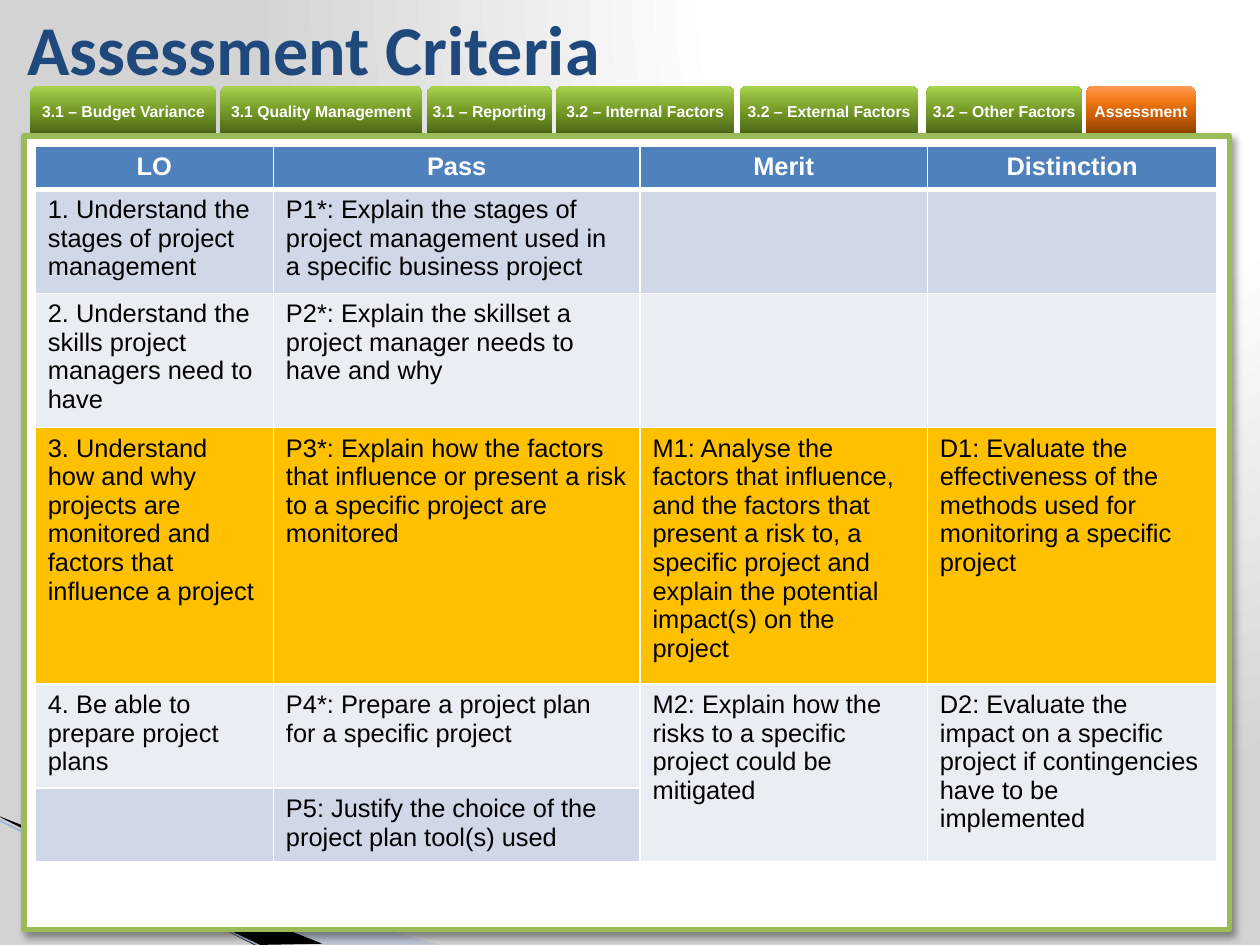
"""Builds the Assessment Criteria slide of a project management course."""
from dataclasses import dataclass

import pptx
import pptx.dml.color
import pptx.enum.shapes
import pptx.enum.text
import pptx.oxml
import pptx.oxml.ns
import pptx.util

ALIGN = pptx.enum.text.PP_ALIGN
SHAPE = pptx.enum.shapes.MSO_SHAPE


@dataclass(frozen=True)
class Theme:
    """Colours, fonts and type sizes of the deck."""
    heading_font: str = "Calibri"
    body_font: str = "Arial"
    title_size: float = 40
    table_size: float = 14.5
    tab_size: float = 9
    navy: str = "1F497D"
    white: str = "FFFFFF"
    black: str = "000000"
    header: str = "4F81BD"
    band_dark: str = "D0D8E8"
    band_light: str = "E9EDF4"
    highlight: str = "FFC000"
    frame: str = "9BBB59"
    ribbon: str = "A7B9DB"
    ribbon_line: str = "9EB3D6"
    backdrop: tuple = ((0, "FFFFFF"), (40, "FFFFFF"), (100, "D3D3D3"))
    green: tuple = ((0, "4A6316"), (50, "769C27"), (70, "89B137"), (100, "A9D651"))
    orange: tuple = ((0, "8B3F00"), (50, "DA6606"), (70, "F47917"), (100, "FF9C54"))


def rgb(value):
    """Turn a hex string into a colour."""
    return pptx.dml.color.RGBColor.from_string(value)


def drawing(markup):
    """Build one DrawingML element from its markup."""
    namespaces = pptx.oxml.ns.nsdecls("a", "p")
    name_end = min(markup.index(mark) for mark in " />" if mark in markup)
    return pptx.oxml.parse_xml(f"{markup[:name_end]} {namespaces}{markup[name_end:]}")


def gradient(stops, direction):
    """Return the markup of a gradient fill."""
    marks = "".join(f'<a:gs pos="{share * 1000}"><a:srgbClr val="{colour}"/></a:gs>'
                    for share, colour in stops)
    return f'<a:gradFill rotWithShape="1"><a:gsLst>{marks}</a:gsLst>{direction}</a:gradFill>'


class SlideBuilder:
    """Draws styled elements on a slide divided into 100 columns and 75 rows."""

    def __init__(self, presentation, theme):
        self.theme = theme
        self.column = presentation.slide_width / 100
        self.row = presentation.slide_height / 75
        self.slide = presentation.slides.add_slide(presentation.slide_layouts[6])
        self.shapes = self.slide.shapes

    def place(self, left, top, width, height):
        """Convert grid units to slide lengths."""
        return (round(left * self.column), round(top * self.row),
                round(width * self.column), round(height * self.row))

    def set_text(self, frame, text, size, colour, font=None, bold=False, align=ALIGN.LEFT):
        """Fill a text frame with one styled paragraph."""
        frame.word_wrap = True
        frame.text = text
        paragraph = frame.paragraphs[0]
        paragraph.alignment = align
        for run in paragraph.runs:
            run.font.name = font or self.theme.body_font
            run.font.size = pptx.util.Pt(size)
            run.font.bold = bold
            run.font.color.rgb = rgb(colour)

    def background(self):
        """Set the radial backdrop."""
        direction = '<a:path path="circle"><a:fillToRect l="65000" t="0" r="0" b="98000"/></a:path>'
        fill = gradient(self.theme.backdrop, direction)
        self.slide.element.cSld.insert(
            0, drawing(f"<p:bg><p:bgPr>{fill}<a:effectLst/></p:bgPr></p:bg>"))

    def ribbon(self, points, colour, opacity=100):
        """Draw a filled polygon."""
        corners = [self.place(x, y, 0, 0)[:2] for x, y in points]
        builder = self.shapes.build_freeform(*corners[0], scale=1.0)
        builder.add_line_segments(corners[1:], close=True)
        shape = builder.convert_to_shape()
        shape.shadow.inherit = False
        shape.line.fill.background()
        shape.fill.solid()
        shape.fill.fore_color.rgb = rgb(colour)
        colour_element = shape.element.spPr.find(".//" + pptx.oxml.ns.qn("a:srgbClr"))
        colour_element.append(drawing(f'<a:alpha val="{opacity * 1000}"/>'))

    def line(self, start, end, colour, width):
        """Draw a straight line."""
        connector = self.shapes.add_connector(
            pptx.enum.shapes.MSO_CONNECTOR.STRAIGHT, *self.place(*start, *end))
        connector.line.color.rgb = rgb(colour)
        connector.line.width = pptx.util.Pt(width)
        connector.element.spPr.append(drawing("<a:effectLst/>"))

    def tab(self, text, left, width, stops):
        """Draw a navigation tab."""
        shape = self.shapes.add_shape(SHAPE.ROUND_2_SAME_RECTANGLE,
                                      *self.place(left, 6.8, width, 3.9))
        shape.shadow.inherit = False
        shape.line.fill.background()
        shape.fill.background()
        properties = shape.element.spPr
        properties.replace(properties.find(pptx.oxml.ns.qn("a:noFill")),
                           drawing(gradient(stops, '<a:lin ang="16200000" scaled="0"/>')))
        frame = shape.text_frame
        frame.margin_left = frame.margin_right = frame.margin_top = frame.margin_bottom = 0
        frame.vertical_anchor = pptx.enum.text.MSO_ANCHOR.MIDDLE
        self.set_text(frame, text, self.theme.tab_size, self.theme.white, bold=True,
                      align=ALIGN.CENTER)

    def panel(self, *box):
        """Draw the framed content panel with its shadow."""
        shape = self.shapes.add_shape(SHAPE.RECTANGLE, *self.place(*box))
        shape.shadow.inherit = False
        shape.fill.solid()
        shape.fill.fore_color.rgb = rgb(self.theme.white)
        shape.line.color.rgb = rgb(self.theme.frame)
        shape.line.width = pptx.util.Pt(3)
        shape.element.spPr.find(pptx.oxml.ns.qn("a:effectLst")).append(drawing(
            '<a:outerShdw blurRad="50800" dist="38100" dir="2700000" algn="tl" rotWithShape="0">'
            f'<a:srgbClr val="{self.theme.black}"><a:alpha val="40000"/></a:srgbClr>'
            '</a:outerShdw>'))

    def title(self, text, *box):
        """Add the slide title."""
        frame = self.shapes.add_textbox(*self.place(*box)).text_frame
        frame.vertical_anchor = pptx.enum.text.MSO_ANCHOR.MIDDLE
        self.set_text(frame, text, self.theme.title_size, self.theme.navy,
                      self.theme.heading_font, bold=True)

    def cell(self, cell, text, fill, header):
        """Fill, border and label one table cell."""
        cell.fill.solid()
        cell.fill.fore_color.rgb = rgb(fill)
        properties = cell._tc.get_or_add_tcPr()
        for index, side in enumerate("LRTB"):
            width = pptx.util.Pt(3 if header and side == "B" else 1)
            properties.insert(index, drawing(
                f'<a:ln{side} w="{width}"><a:solidFill><a:srgbClr val="{self.theme.white}"/>'
                f'</a:solidFill></a:ln{side}>'))
        if text:
            self.set_text(cell.text_frame, text, self.theme.table_size,
                          self.theme.white if header else self.theme.black,
                          bold=header, align=ALIGN.CENTER if header else ALIGN.LEFT)

    def table(self, left, top, widths, heights, rows, fills, merges):
        """Draw the criteria table."""
        box = self.place(left, top, sum(widths), sum(heights))
        table = self.shapes.add_table(len(rows), len(widths), *box).table
        for column, width in zip(table.columns, widths):
            column.width = round(width * self.column)
        for row, height in zip(table.rows, heights):
            row.height = round(height * self.row)
        for row_index, (texts, fill) in enumerate(zip(rows, fills)):
            for column_index, text in enumerate(texts):
                self.cell(table.cell(row_index, column_index), text, fill, row_index == 0)
        for first, last in merges:
            table.cell(*first).merge(table.cell(*last))


TABS = [("3.1 – Budget Variance", 2.4, 14.8), ("3.1 Quality Management", 17.5, 16),
        ("3.1 – Reporting", 33.9, 9.9), ("3.2 – Internal Factors", 44.1, 14.2),
        ("3.2 – External Factors", 58.7, 14.2), ("3.2 – Other Factors", 73.5, 12.4),
        ("Assessment", 86.2, 8.7)]

CRITERIA = [
    ("LO", "Pass", "Merit", "Distinction"),
    ("1. Understand the stages of project management",
     "P1*: Explain the stages of project management used in a specific business project", "", ""),
    ("2. Understand the skills project managers need to have",
     "P2*: Explain the skillset a project manager needs to have and why", "", ""),
    ("3. Understand how and why projects are monitored and factors that influence a project",
     "P3*: Explain how the factors that influence or present a risk to a specific project are monitored",
     "M1: Analyse the factors that influence, and the factors that present a risk to, a specific "
     "project and explain the potential impact(s) on the project",
     "D1: Evaluate the effectiveness of the methods used for monitoring a specific project"),
    ("4. Be able to prepare project plans", "P4*: Prepare a project plan for a specific project",
     "M2: Explain how the risks to a specific project could be mitigated",
     "D2: Evaluate the impact on a specific project if contingencies have to be implemented"),
    ("", "P5: Justify the choice of the project plan tool(s) used", "", ""),
]


def main():
    """Build and save the slide."""
    presentation = pptx.Presentation()
    presentation.slide_width = pptx.util.Inches(10)
    presentation.slide_height = pptx.util.Inches(7.5)
    theme = Theme()
    builder = SlideBuilder(presentation, theme)
    builder.background()
    builder.ribbon([(-0.1, 65), (34.9, 75), (25.9, 75), (-0.1, 64.9)], theme.ribbon, 40)
    builder.ribbon([(0, 64.8), (25.6, 74.9), (20.2, 75), (0.1, 64.9)], theme.black)
    builder.line((-0.1, 65.1), (20.9, 75.2), theme.ribbon_line, 0.95)
    for text, left, width in TABS:
        builder.tab(text, left, width, theme.orange if text == "Assessment" else theme.green)
    builder.panel(1.9, 10.8, 95.7, 63)
    builder.title("Assessment Criteria", 1.2, 0, 84.3, 7.6)
    builder.table(2.8, 11.6, [18.9, 29.1, 22.8, 23], [3.3, 8, 10.2, 19.5, 8, 5.5], CRITERIA,
                  [theme.header, theme.band_dark, theme.band_light, theme.highlight,
                   theme.band_light, theme.band_dark],
                  [((4, column), (5, column)) for column in (2, 3)])
    presentation.save("out.pptx")


if __name__ == "__main__":
    main()
